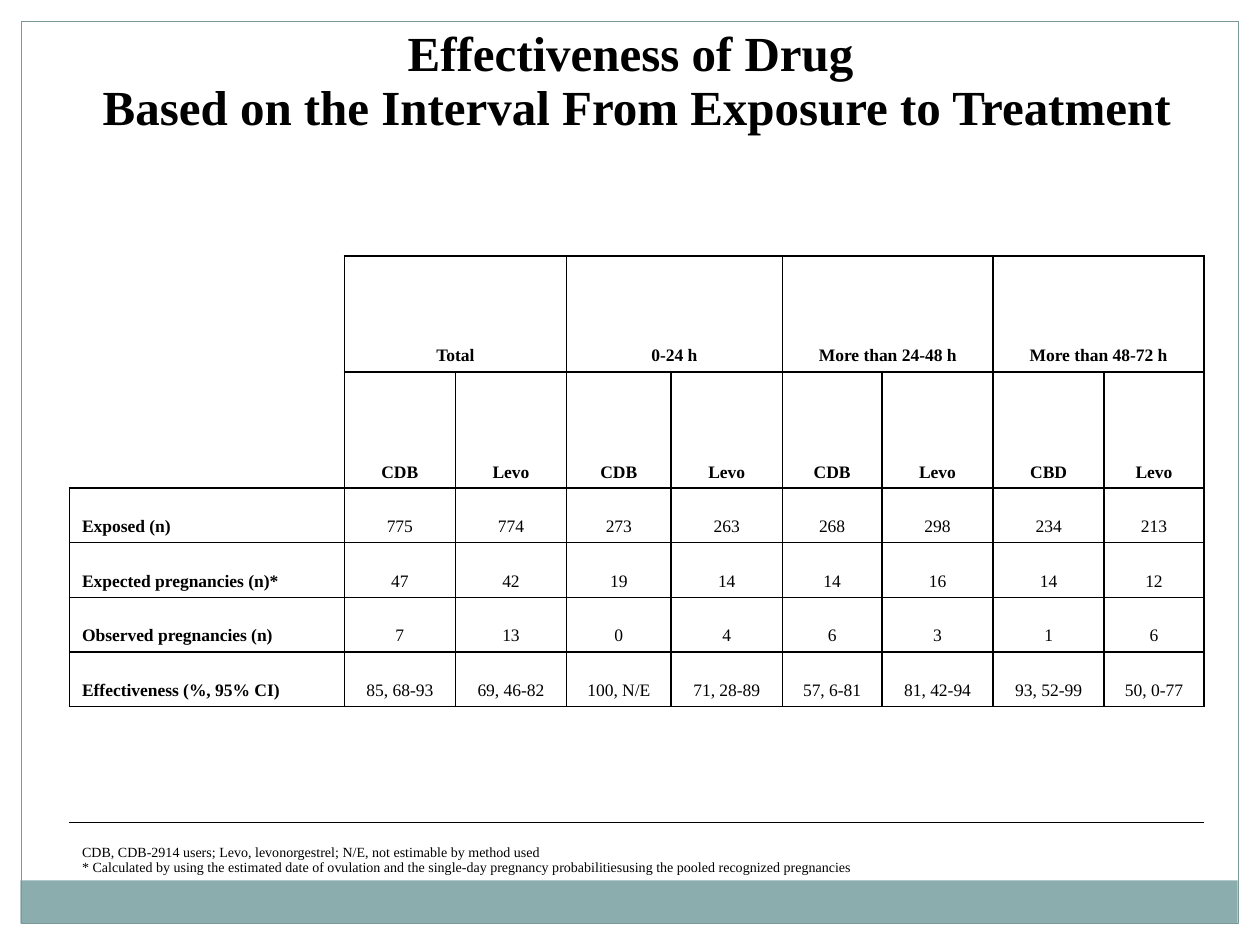
from dataclasses import dataclass

from lxml import etree
from pptx import Presentation
from pptx import util as u
from pptx.dml.color import RGBColor
from pptx.enum import shapes, text
from pptx.oxml import ns


@dataclass(frozen=True)
class Theme:
    font: str = "Times New Roman"
    ink: str = "000000"
    paper: str = "FFFFFF"
    band: str = "8CADAE"
    frame: str = "7C999A"
    title_size: int = 28
    table_size: int = 10
    note_size: int = 8
    frame_width: float = 0.75
    border_width: float = 1
    plain_table: str = "{2D5ABB26-0587-4C30-8999-92F81FD0307C}"


class SlideBuilder:
    def __init__(self, slide, theme):
        self.slide = slide
        self.theme = theme

    def rectangle(self, left, top, width, height, fill=None, line=None):
        shape = self.slide.shapes.add_shape(
            shapes.MSO_SHAPE.RECTANGLE, *map(u.Cm, (left, top, width, height)))
        shape.shadow.inherit = False
        if fill:
            shape.fill.solid()
            shape.fill.fore_color.rgb = RGBColor.from_string(fill)
        else:
            shape.fill.background()
        if line:
            shape.line.color.rgb = RGBColor.from_string(line)
            shape.line.width = u.Pt(self.theme.frame_width)
        else:
            shape.line.fill.background()

    def table(self, left, top, widths, heights, boxed):
        """Add a plain table; boxed(row, column) tells which cells have borders."""
        frame = self.slide.shapes.add_table(
            len(heights), len(widths), u.Cm(left), u.Cm(top),
            u.Cm(sum(widths)), u.Cm(sum(heights)))
        table = frame.table
        table.first_row = table.horz_banding = False
        style = frame._element.find(".//" + ns.qn("a:tableStyleId"))
        style.text = self.theme.plain_table
        for column, width in zip(table.columns, widths):
            column.width = u.Cm(width)
        for row, height in zip(table.rows, heights):
            row.height = u.Cm(height)
        neighbours = {"lnL": (0, -1), "lnR": (0, 1), "lnT": (-1, 0), "lnB": (1, 0)}
        for row in range(len(heights)):
            for column in range(len(widths)):
                cell = table.cell(row, column)
                for side, (down, across) in neighbours.items():
                    if boxed(row, column) or boxed(row + down, column + across):
                        self.border(cell, side)
                cell.fill.background()
        return table

    def border(self, cell, side):
        properties = cell._tc.get_or_add_tcPr()
        line = etree.SubElement(properties, ns.qn("a:" + side),
                                w=str(u.Pt(self.theme.border_width)))
        fill = etree.SubElement(line, ns.qn("a:solidFill"))
        etree.SubElement(fill, ns.qn("a:srgbClr"), val=self.theme.ink)

    def cell_text(self, cell, lines, size, bold=False, centred=True,
                  anchor=text.MSO_ANCHOR.BOTTOM, breaks=False):
        """Set lines as paragraphs, or as one paragraph with line breaks."""
        cell.vertical_anchor = anchor
        frame = cell.text_frame
        paragraph = frame.paragraphs[0]
        for index, line in enumerate(lines):
            if index and breaks:
                paragraph.add_line_break()
            elif index:
                paragraph = frame.add_paragraph()
            paragraph.alignment = text.PP_ALIGN.CENTER if centred else text.PP_ALIGN.LEFT
            run = paragraph.add_run()
            run.text = line
            run.font.name = self.theme.font
            run.font.size = u.Pt(size)
            run.font.bold = bold
            run.font.color.rgb = RGBColor.from_string(self.theme.ink)


TITLE = ["Effectiveness of Drug ", "Based on the Interval From Exposure to Treatment"]
INTERVALS = ["Total", "0-24 h", "More than 24-48 h", "More than 48-72 h"]
DRUGS = ["CDB", "Levo", "CDB", "Levo", "CDB", "Levo", "CBD", "Levo"]
RESULTS = [
    ["Exposed (n)", "775", "774", "273", "263", "268", "298", "234", "213"],
    ["Expected pregnancies (n)*", "47", "42", "19", "14", "14", "16", "14", "12"],
    ["Observed pregnancies (n)", "7", "13", "0", "4", "6", "3", "1", "6"],
    ["Effectiveness (%, 95% CI)", "85, 68-93", "69, 46-82", "100, N/E", "71, 28-89",
     "57, 6-81", "81, 42-94", "93, 52-99", "50, 0-77"],
]
NOTES = [
    "CDB, CDB-2914 users; Levo, levonorgestrel; N/E, not estimable by method used",
    "* Calculated by using the estimated date of ovulation and the single-day "
    "pregnancy probabilitiesusing the pooled recognized pregnancies",
]
INTERVAL_ROW, DRUG_ROW, RESULT_ROW, NOTE_ROW = 2, 3, 4, 9
COLUMN_WIDTHS = [5.54, 2.24, 2.24, 2.11, 2.24, 2.01, 2.24, 2.24, 2.01]
ROW_HEIGHTS = [2.41] + [2.34] * 3 + [1.1] * 4 + [2.34, 1.52]


def has_border(row, column):
    first_row = RESULT_ROW if column == 0 else INTERVAL_ROW
    return 0 <= column < len(COLUMN_WIDTHS) and first_row <= row < RESULT_ROW + len(RESULTS)


def main():
    presentation = Presentation()
    presentation.slide_width, presentation.slide_height = u.Cm(25.4), u.Cm(19.05)
    theme = Theme()
    # The title is the table's first row, so the blank layout is used
    slide = presentation.slides.add_slide(presentation.slide_layouts[6])
    builder = SlideBuilder(slide, theme)

    # Margins, bottom band and frame
    edge = 0.43
    builder.rectangle(0, 0, 25.4, edge, fill=theme.paper)
    for left in (25.4 - edge, 0):
        builder.rectangle(left, 0, edge, 19.05, fill=theme.paper)
    builder.rectangle(0.41, 17.75, 24.54, 0.87, fill=theme.band)
    builder.rectangle(edge, edge, 25.4 - 2 * edge, 18.19, line=theme.frame)

    table = builder.table(1.4, 0.41, COLUMN_WIDTHS, ROW_HEIGHTS, has_border)
    last_column = len(COLUMN_WIDTHS) - 1

    # Title row
    title = table.cell(0, 0)
    title.merge(table.cell(0, last_column))
    title.margin_top = title.margin_bottom = u.Cm(0.07)
    builder.cell_text(title, TITLE, theme.title_size, bold=True)

    # Column headings
    for index, interval in enumerate(INTERVALS):
        column = 1 + 2 * index
        heading = table.cell(INTERVAL_ROW, column)
        heading.merge(table.cell(INTERVAL_ROW, column + 1))
        builder.cell_text(heading, [interval], theme.table_size, bold=True)
    for column, drug in enumerate(DRUGS, 1):
        builder.cell_text(table.cell(DRUG_ROW, column), [drug], theme.table_size, bold=True)

    # Results
    for row, values in enumerate(RESULTS, RESULT_ROW):
        for column, value in enumerate(values):
            is_label = column == 0
            builder.cell_text(table.cell(row, column), [value], theme.table_size,
                              bold=is_label, centred=not is_label)

    # Notes
    notes = table.cell(NOTE_ROW, 0)
    notes.merge(table.cell(NOTE_ROW, last_column))
    builder.cell_text(notes, NOTES, theme.note_size, centred=False,
                      anchor=text.MSO_ANCHOR.MIDDLE, breaks=True)

    presentation.save("out.pptx")


if __name__ == "__main__":
    main()
